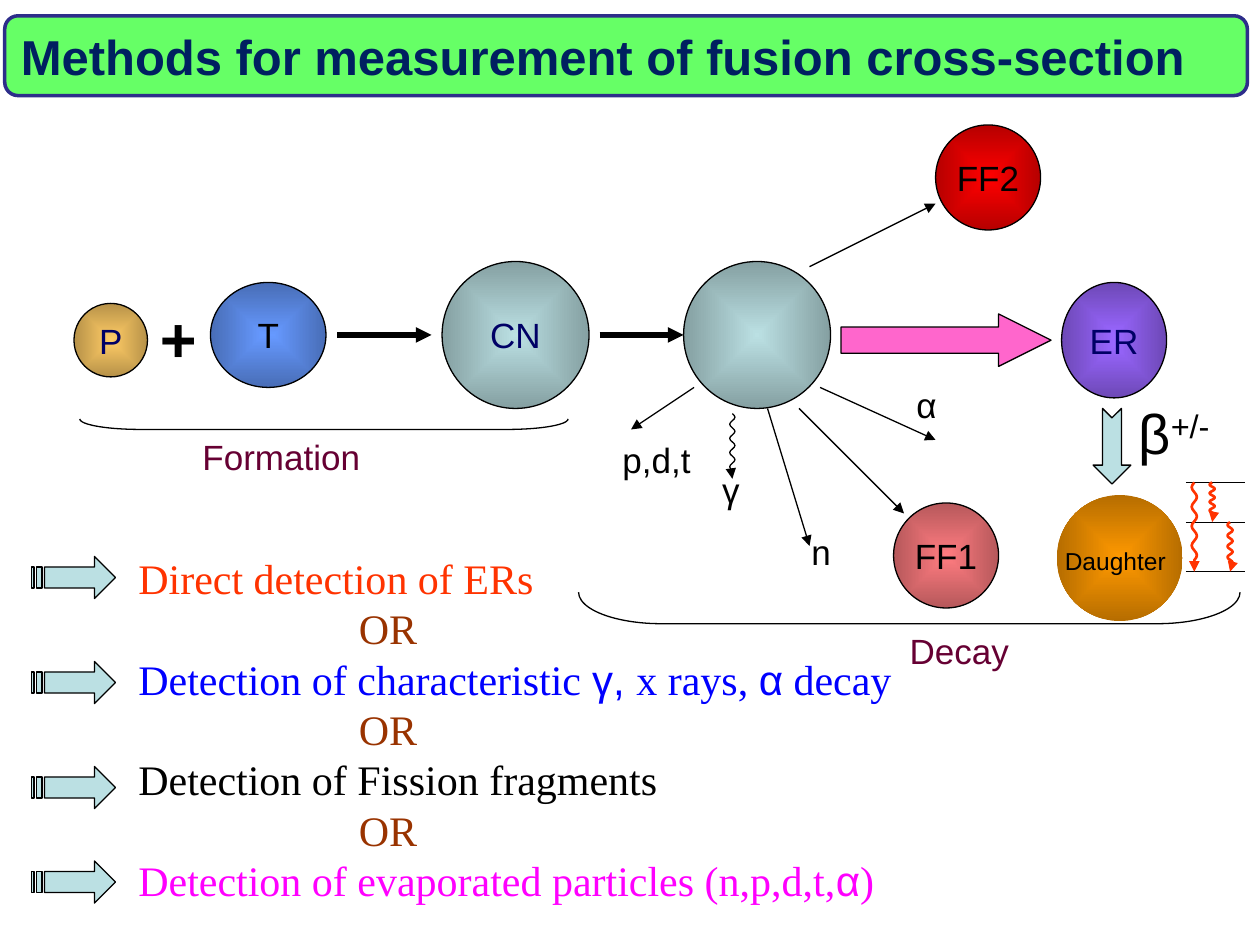
from math import pi, sin

from lxml.etree import SubElement
from pptx import Presentation
from pptx.dml.color import RGBColor
from pptx.enum.shapes import MSO_CONNECTOR as Line, MSO_SHAPE as Preset
from pptx.enum.text import MSO_ANCHOR as Anchor, MSO_AUTO_SIZE as AutoSize, PP_ALIGN as Align
from pptx.oxml.ns import qn
from pptx.util import Inches, Pt

deck = Presentation()
deck.slide_width, deck.slide_height = Inches(10), Inches(7.5)
slide = deck.slides.add_slide(deck.slide_layouts[6])
shapes = slide.shapes
COLUMNS = 120
cell = deck.slide_width // COLUMNS


def paint(item, fill=None, line="000000", weight=0.75, arrow=False, glow=False):
    properties = item._element.spPr
    if glow:
        item.fill.gradient()
        for stop in item.fill.gradient_stops:
            stop.color.rgb = RGBColor.from_string(fill)
        gradient = properties.find(qn("a:gradFill"))
        rim = list(gradient.iter(qn("a:srgbClr")))[-1]
        SubElement(rim, qn("a:shade"), val="46275")
        gradient.remove(gradient.find(qn("a:lin")))
        center = SubElement(gradient, qn("a:path"), path="shape")
        SubElement(center, qn("a:fillToRect"), dict.fromkeys("ltrb", "50000"))
    elif fill:
        item.fill.solid()
        item.fill.fore_color.rgb = RGBColor.from_string(fill)
    elif hasattr(item, "fill"):
        item.fill.background()
    if line:
        item.line.color.rgb = RGBColor.from_string(line)
        item.line.width = Pt(weight)
    else:
        item.line.fill.background()
    if arrow:
        SubElement(properties.find(qn("a:ln")), qn("a:tailEnd"), type="triangle")
    SubElement(properties, qn("a:effectLst"))


def write(paragraph, text, size=20, color="000000", font="Arial", bold=False, raised=False):
    run = paragraph.add_run()
    run.text = text
    run.font.size, run.font.name, run.font.bold = Pt(size), font, bold
    run.font.color.rgb = RGBColor.from_string(color)
    if raised:
        run._r.get_or_add_rPr().set("baseline", "30000")


nuclei = [
    ("", 65.1, 24.9, 14, 14, "BBE0E3", {}),
    ("P", 7.05, 28.9, 7, 7, "FFCC66", {"color": "000066"}),
    ("T", 20.05, 26.9, 11, 10, "6699FF", {}),
    ("CN", 42.1, 24.9, 14, 14, "BBE0E3", {"color": "000066"}),
    ("FF1", 85.1, 47.9, 10, 10, "FF7C80", {}),
    ("FF2", 89.1, 11.9, 10, 10, "FF0000", {}),
    ("ER", 101.1, 26.9, 10, 11, "9966FF", {"color": "000066"}),
    ("Daughter", 100.65, 47.15, 12, 12, "FF9900", {"size": 14}),
]
for symbol, column, row, width, height, core, style in nuclei:
    nucleus = shapes.add_shape(Preset.OVAL, *(int(n * cell) for n in (column, row, width, height)))
    paint(nucleus, core, line=None if "size" in style else "000000", glow=True)
    if symbol:
        frame = nucleus.text_frame
        frame.word_wrap, frame.vertical_anchor = False, Anchor.MIDDLE
        frame.paragraphs[0].alignment = Align.CENTER
        write(frame.paragraphs[0], symbol, **style)
        if "size" in style:
            frame.paragraphs[0].space_before = Pt(3.6)
            write(frame.paragraphs[0], " ", size=18)

tracks = [
    (32.1, 31.9, 41.1, 31.9, 3),
    (57.1, 31.9, 65.1, 31.9, 3),
    (66.1, 36.9, 60.1, 40.9, 0.75),
    (77.1, 25.4, 89.1, 19.4, 0.75),
    (78.1, 36.9, 89.1, 41.9, 0.75),
    (73.1, 38.9, 77.1, 52, 0.75),
    (76.1, 38.9, 86.1, 48.9, 0.75),
]
for *ends, weight in tracks:
    track = shapes.add_connector(Line.STRAIGHT, *(int(n * cell) for n in ends))
    paint(track, weight=weight, arrow=True)

symbols = [
    (Preset.RIGHT_ARROW, 80.1, 29.9, 20, 5, 0, (0.5, 1), "FF66CC"),
    (Preset.NOTCHED_RIGHT_ARROW, 102.3, 40.7, 7.2, 3.6, 90, (0.5, 0.5), "BBE0E3"),
    (Preset.LEFT_BRACKET, 30.35, 17.15, 1, 46.5, 270, (5.81,), None),
    (Preset.LEFT_BRACKET, 85.1, 26.4, 3, 63, 270, (2.63,), None),
]
for preset, column, row, width, height, turn, adjustments, color in symbols:
    symbol = shapes.add_shape(preset, *(int(n * cell) for n in (column, row, width, height)))
    symbol.rotation = turn
    for index, value in enumerate(adjustments):
        symbol.adjustments[index] = value
    paint(symbol, color)

labels = [
    (14.05, 27.9, 5.9, 8.4, [("+", {"size": 36, "bold": True})]),
    (58.1, 41.2, 8.9, 5.3, [("p,d,t", {})]),
    (86.1, 35.9, 4.9, 6, [("α", {})]),
    (76.1, 49.9, 4.4, 6, [("n", {})]),
    (67.6, 44, 3.8, 5.3, [("γ", {})]),
    (18.1, 40.9, 19.1, 6, [("Formation", {"color": "660033"})]),
    (85.45, 59.4, 12.6, 6, [("Decay", {"color": "660033"})]),
    (107.25, 37.4, 9.5, 7.6, [("β", {"size": 32}), ("+/-", {"size": 32, "raised": True})]),
]
for column, row, width, height, runs in labels:
    label = shapes.add_textbox(*(int(n * cell) for n in (column, row, width, height)))
    label.text_frame.word_wrap = False
    label.text_frame.auto_size = AutoSize.SHAPE_TO_FIT_TEXT
    for text, style in runs:
        write(label.text_frame.paragraphs[0], text, **style)

SERIF, SANS = "Times New Roman", "Arial"
methods = [
    ("FF3300", [("Direct detection of ERs", SERIF)]),
    ("0000FF", [("Detection of characteristic ", SERIF), ("γ, ", SANS), ("x rays, ", SERIF),
                ("α", SANS), (" decay", SERIF)]),
    ("000000", [("Detection of Fission fragments", SERIF)]),
    ("FF00FF", [("Detection of evaporated particles (n,p,d,t,", SERIF), ("α", SANS), (")", SERIF)]),
]
choices = []
for color, runs in methods:
    choices += [("993300", [("OR", SERIF)], 21, 0), (color, runs, 6, -6)]
listing = shapes.add_textbox(*(int(n * cell) for n in (12, 52, 76.2, 35.2))).text_frame
listing.word_wrap = False
for index, (color, runs, margin, indent) in enumerate(choices[1:]):
    paragraph = listing.add_paragraph() if index else listing.paragraphs[0]
    paragraph.line_spacing = Pt(28.8)
    layout = paragraph._p.get_or_add_pPr()
    layout.set("marL", str(margin * cell))
    layout.set("indent", str(indent * cell))
    for text, font in runs:
        write(paragraph, text, size=24, color=color, font=font)

pointer_outline = [
    [(6, 0), (6, 1), (1.25, 1), (1.25, 3), (6, 3), (6, 4), (8, 2)],
    [(0.5, 1), (0.5, 3), (1, 3), (1, 1)],
    [(0, 1), (0, 3), (0.25, 3), (0.25, 1)],
]
for row in (53, 63, 73, 82):
    contours = [[((3 + x) * cell, (row + y) * cell) for x, y in part] for part in pointer_outline]
    outline = shapes.build_freeform(*contours[0][0])
    for index, contour in enumerate(contours):
        if index:
            outline.move_to(*contour[0])
        outline.add_line_segments(contour[1:], close=True)
    paint(outline.convert_to_shape(), "BBE0E3")

level_scheme = shapes.add_group_shape().shapes
LEVELS = (45.95, 49.73, 54.45)
for row in LEVELS:
    level = level_scheme.add_connector(Line.STRAIGHT, *(int(n * cell) for n in (112.95, row, 118.6, row)))
    paint(level)

STEPS, SWINGS, WAVY_SHARE = 32, 8, 0.87
rays = [
    (shapes, 69.75, 39.4, 45.6, 0.25, "000000", 0.75),
    (level_scheme, 113.75, LEVELS[0], LEVELS[2], -0.25, "FF3300", 1.5),
    (level_scheme, 115.45, LEVELS[0], LEVELS[1], -0.25, "FF3300", 1.5),
    (level_scheme, 117.15, LEVELS[1], LEVELS[2], -0.25, "FF3300", 1.5),
]
for owner, column, top, bottom, swing, color, weight in rays:
    wave = [
        ((column + swing * sin(pi * SWINGS * step / STEPS)) * cell,
         (top + (bottom - top) * WAVY_SHARE * step / STEPS) * cell)
        for step in range(STEPS + 1)
    ]
    ray = owner.build_freeform(*wave[0])
    ray.add_line_segments(wave[1:] + [(column * cell, bottom * cell)], close=False)
    paint(ray.convert_to_shape(), line=color, weight=weight, arrow=True)

banner = shapes.add_shape(Preset.ROUNDED_RECTANGLE, *(int(n * cell) for n in (0.45, 1.5, 118.35, 7.6)))
paint(banner, "66FF66", line="2D2D8A", weight=2)
banner.text_frame.word_wrap = True
banner.text_frame.vertical_anchor = Anchor.MIDDLE
heading = banner.text_frame.paragraphs[0]
heading.alignment = Align.LEFT
write(heading, "Methods for measurement of fusion cross-section", size=28, color="002060", bold=True)

deck.save("out.pptx")
